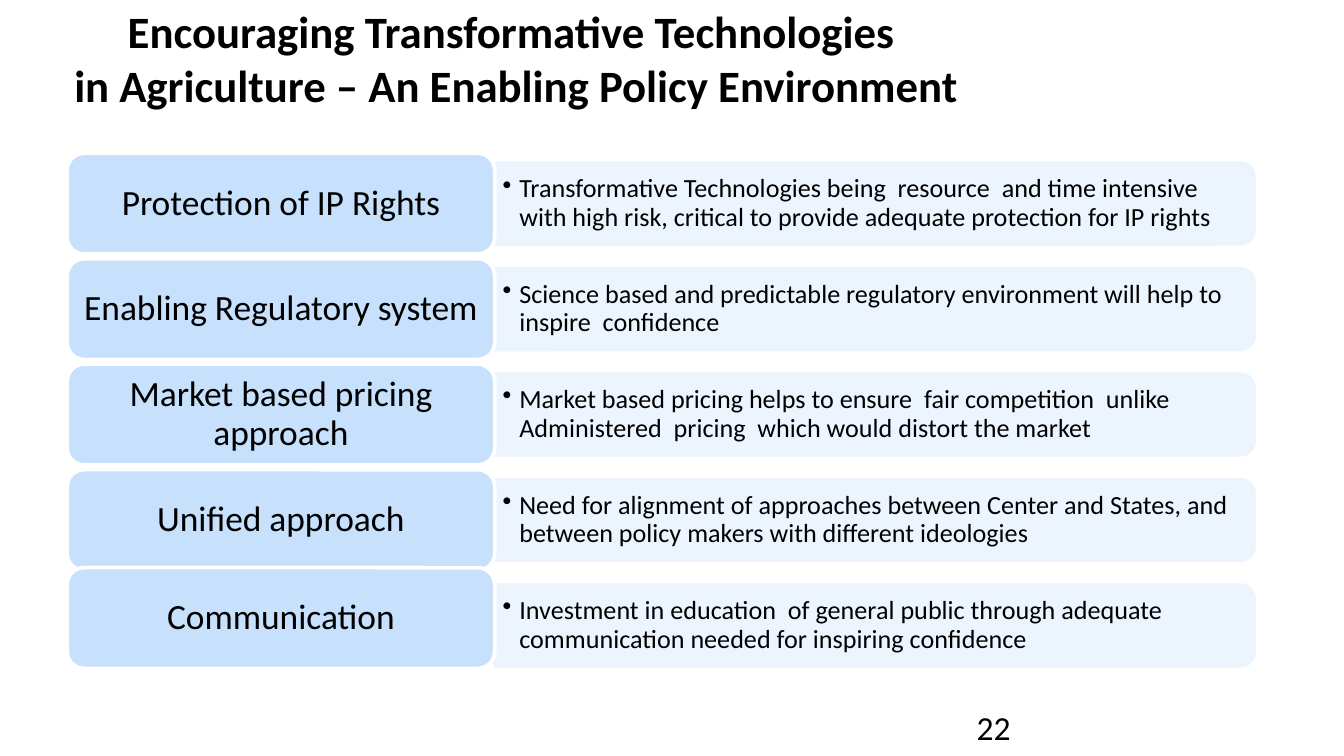
from typing import NamedTuple

from lxml import etree
from pptx import Presentation
from pptx.dml.color import RGBColor
from pptx.enum.shapes import MSO_SHAPE as Preset
from pptx.enum.text import MSO_ANCHOR as Anchor, PP_ALIGN as Align
from pptx.oxml.ns import qn
from pptx.util import Pt

BLACK = RGBColor(0x00, 0x00, 0x00)
WHITE = RGBColor(0xFF, 0xFF, 0xFF)
LABEL_BLUE = RGBColor(0xC7, 0xE0, 0xFB)
PANEL_BLUE = RGBColor(0xEB, 0xF3, 0xFD)

# Row grid, in points
ROW_PITCH = 56.5
FIRST_CENTER = 109.1
LABEL_LEFT, LABEL_WIDTH, LABEL_HEIGHT = 36, 229, 54
PANEL_LEFT, PANEL_WIDTH, PANEL_HEIGHT = 265, 406.8, 43.2
DETAIL_WIDTH, DETAIL_HEIGHT = 404.6, 39


class Policy(NamedTuple):
    label: str
    detail: str
    label_shift: float = 0


POLICIES = [
    Policy("Protection of IP Rights",
           "Transformative Technologies being  resource  and time intensive "
           "with high risk, critical to provide adequate protection for IP rights"),
    Policy("Enabling Regulatory system",
           "Science based and predictable regulatory environment will help to "
           "inspire  confidence"),
    Policy("Market based pricing approach",
           "Market based pricing helps to ensure  fair competition  unlike "
           "Administered  pricing  which would distort the market"),
    Policy("Unified approach",
           "Need for alignment of approaches between Center and States, and "
           "between policy makers with different ideologies"),
    Policy("Communication",
           "Investment in education  of general public through adequate "
           "communication needed for inspiring confidence", label_shift=-4),
]


def write(box, text: str, size: float, align=Align.LEFT, anchor=Anchor.MIDDLE,
          inset: tuple = (7.2, 3.6), spacing: float = 1, bold: bool = False,
          bullet: bool = False) -> None:
    frame = box.text_frame
    frame.word_wrap = True
    frame.vertical_anchor = anchor
    frame.margin_left = frame.margin_right = Pt(inset[0])
    frame.margin_top = frame.margin_bottom = Pt(inset[1])
    para = frame.paragraphs[0]
    para.text = text
    para.alignment = align
    para.line_spacing = spacing
    if bullet:
        properties = para._p.get_or_add_pPr()
        properties.set("marL", str(Pt(9)))
        properties.set("indent", str(Pt(-9)))
        etree.SubElement(properties, qn("a:buChar")).set("char", "•")
    para.font.name = "Calibri"
    para.font.size = Pt(size)
    para.font.bold = bold
    para.font.color.rgb = BLACK


def add_box(page, left: float, top: float, width: float, height: float):
    return page.shapes.add_textbox(Pt(left), Pt(top), Pt(width), Pt(height))


def add_block(page, preset, left: float, top: float, width: float,
              height: float, fill: RGBColor, line: RGBColor):
    block = page.shapes.add_shape(preset, Pt(left), Pt(top), Pt(width), Pt(height))
    block.shadow.inherit = False
    block.fill.solid()
    block.fill.fore_color.rgb = fill
    block.line.color.rgb = line
    block.line.width = Pt(2)
    return block


def add_policy(page, policy: Policy, center: float) -> None:
    # Panel: a shape with two round corners, turned so they face right
    panel = add_block(page, Preset.ROUND_2_SAME_RECTANGLE,
                      PANEL_LEFT + (PANEL_WIDTH - PANEL_HEIGHT) / 2,
                      center - PANEL_WIDTH / 2, PANEL_HEIGHT, PANEL_WIDTH,
                      PANEL_BLUE, PANEL_BLUE)
    panel.rotation = 90
    for color in panel._element.spPr.iter(qn("a:srgbClr")):
        etree.SubElement(color, qn("a:alpha")).set("val", "90000")

    # Detail text, upright over the panel
    detail = add_box(page, PANEL_LEFT, center - DETAIL_HEIGHT / 2,
                     DETAIL_WIDTH, DETAIL_HEIGHT)
    write(detail, policy.detail, 14, inset=(4.2, 2.1), spacing=0.9, bullet=True)

    # Label
    label = add_block(page, Preset.ROUNDED_RECTANGLE, LABEL_LEFT,
                      center - LABEL_HEIGHT / 2 + policy.label_shift,
                      LABEL_WIDTH, LABEL_HEIGHT, LABEL_BLUE, WHITE)
    write(label, policy.label, 19, Align.CENTER, inset=(5, 3), spacing=0.9)


def main() -> None:
    deck = Presentation()
    deck.slide_width, deck.slide_height = Pt(720), Pt(405)
    page = deck.slides.add_slide(deck.slide_layouts[6])

    # Title
    title = add_box(page, -47.5, -3, 648, 67.7)
    write(title, "Encouraging Transformative Technologies \v"
                 "in Agriculture – An Enabling Policy Environment",
          24, Align.CENTER, bold=True)

    # Page number
    write(add_box(page, 516.2, 375, 167.8, 21.6), "22", 18, anchor=Anchor.TOP)

    # Policy rows
    for row, policy in enumerate(POLICIES):
        add_policy(page, policy, FIRST_CENTER + row * ROW_PITCH)

    deck.save("out.pptx")


if __name__ == "__main__":
    main()
